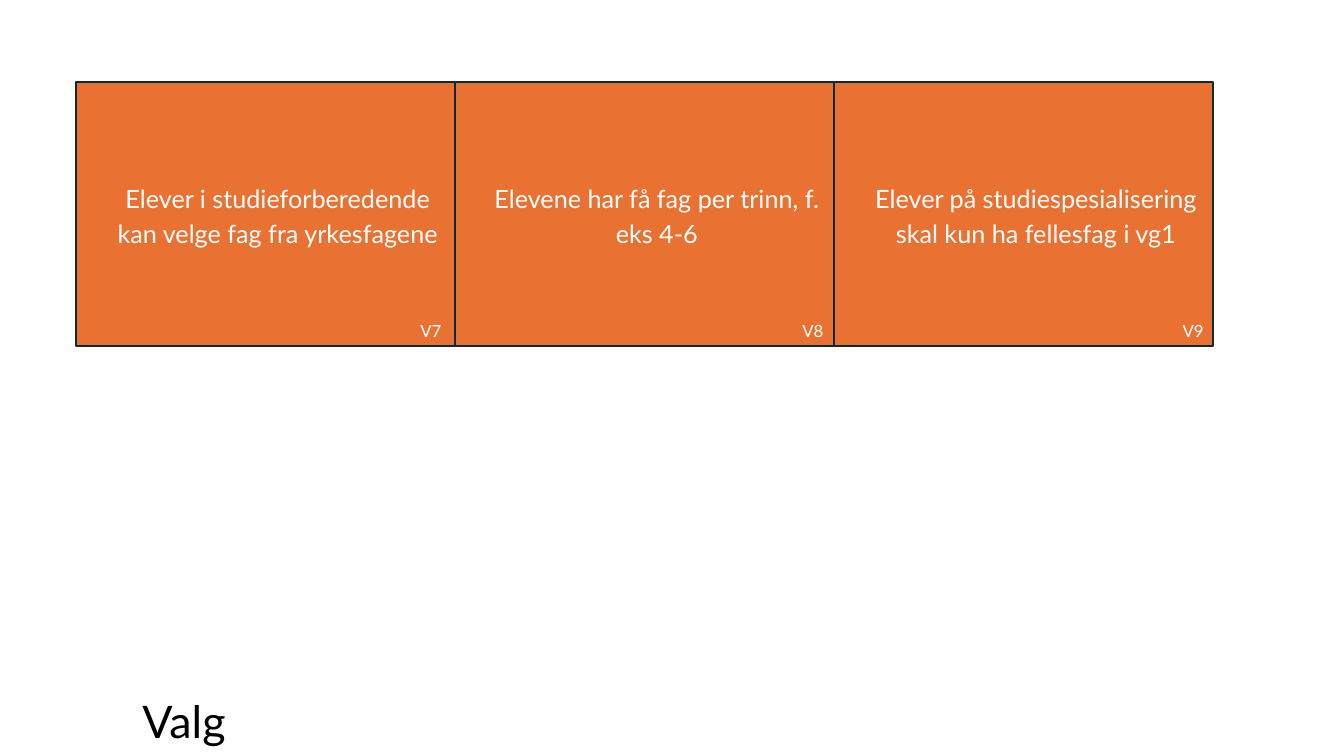
from pptx import Presentation
from pptx.dml.color import RGBColor
from pptx.enum import shapes, text
from pptx.util import Inches, Pt

COLORS = {"card": "E97132", "border": "092A39", "light": "FFFFFF", "dark": "000000"}
FONT = "Lato"
CARD_LEFT, CARD_TOP, CARD_WIDTH, CARD_HEIGHT = 0.75, 0.81, 3.76, 2.62
CHOICES = [
    ("V7", "Elever i studieforberedende kan velge fag fra yrkesfagene", 4.07),
    ("V8", "Elevene har få fag per trinn, f. eks 4-6", 7.86),
    ("V9", "Elever på studiespesialisering skal kun ha fellesfag i vg1", 11.63),
]


def rgb(name):
    return RGBColor.from_string(COLORS[name])


def write(frame, words, size, color, align):
    frame.text = words
    paragraph = frame.paragraphs[0]
    paragraph.alignment = align
    font = paragraph.runs[0].font
    font.name = FONT
    font.size = Pt(size)
    font.color.rgb = rgb(color)
    return paragraph


def add_label(parent, words, box, size, color, align, wrap):
    label = parent.add_textbox(*map(Inches, box))
    frame = label.text_frame
    frame.word_wrap = wrap
    frame.auto_size = text.MSO_AUTO_SIZE.SHAPE_TO_FIT_TEXT
    write(frame, words, size, color, align)


def add_card(parent, words, left):
    card = parent.add_shape(
        shapes.MSO_SHAPE.RECTANGLE,
        Inches(left), Inches(CARD_TOP), Inches(CARD_WIDTH), Inches(CARD_HEIGHT),
    )
    card.shadow.inherit = False
    card.fill.solid()
    card.fill.fore_color.rgb = rgb("card")
    card.line.color.rgb = rgb("border")
    card.line.width = Pt(1.5)
    frame = card.text_frame
    frame.word_wrap = True
    frame.vertical_anchor = text.MSO_ANCHOR.MIDDLE
    statement = write(frame, words, 18, "light", text.PP_ALIGN.CENTER)
    statement.line_spacing = 1.15
    statement.space_after = Pt(8)
    properties = statement._p.get_or_add_pPr()
    properties.set("marL", str(Inches(0.25)))
    properties.set("indent", "0")


def main():
    deck = Presentation()
    deck.slide_width = Inches(13.33)
    deck.slide_height = Inches(7.5)
    slide = deck.slides.add_slide(deck.slide_layouts[6])

    add_label(slide.shapes, "Valg", (1.27, 6.83, 1.11, 0.64), 32, "dark",
              text.PP_ALIGN.CENTER, False)
    for column, (code, statement, code_left) in enumerate(CHOICES):
        choice = slide.shapes.add_group_shape().shapes
        add_card(choice, statement, CARD_LEFT + column * CARD_WIDTH)
        add_label(choice, code, (code_left, 3.13, 0.58, 0.3), 12, "light",
                  text.PP_ALIGN.LEFT, True)

    deck.save("out.pptx")


if __name__ == "__main__":
    main()
